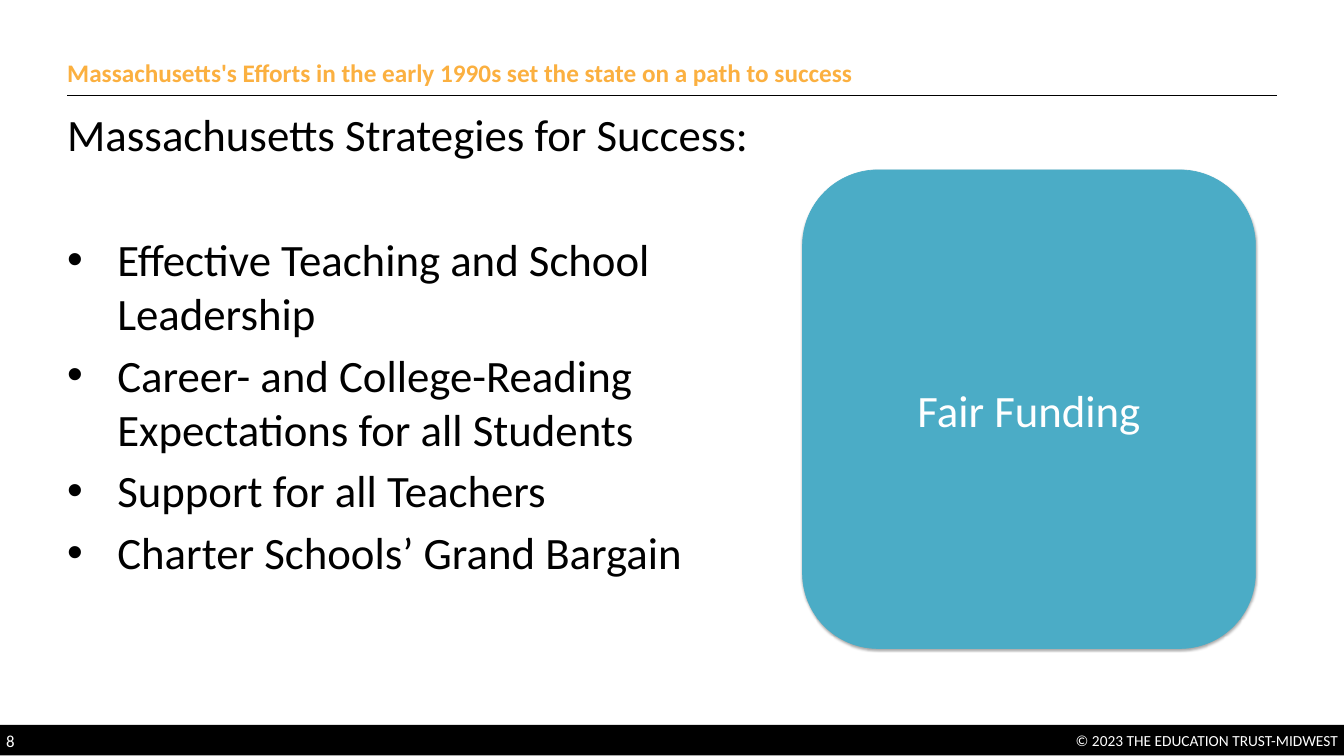
from lxml import etree
from pptx import Presentation
from pptx.dml.color import RGBColor
from pptx.enum.shapes import MSO_CONNECTOR, MSO_SHAPE
from pptx.enum.text import MSO_ANCHOR, MSO_AUTO_SIZE, PP_ALIGN
from pptx.oxml.ns import qn
from pptx.util import Pt

LEFT, CENTER, RIGHT = PP_ALIGN.LEFT, PP_ALIGN.CENTER, PP_ALIGN.RIGHT
TOP, MIDDLE = MSO_ANCHOR.TOP, MSO_ANCHOR.MIDDLE

# Content
TITLE = "Massachusetts's Efforts in the early 1990s set the state on a path to success"
HEADING = "Massachusetts Strategies for Success:"
STRATEGIES = [
    "Effective Teaching and School Leadership",
    "Career- and College-Reading Expectations for all Students",
    "Support for all Teachers",
    "Charter Schools’ Grand Bargain",
]
HIGHLIGHT = "Fair Funding"
COPYRIGHT = "© 2023 THE EDUCATION TRUST-MIDWEST"
PAGE_NUMBER = "8"

# Style and measures in points
FONT = "Calibri"
COLORS = {"title": "FBB040", "text": "000000", "white": "FFFFFF", "teal": "4BACC6"}
WIDTH, HEIGHT = 1583.28, 890.64
MARGIN = 79.2
RULE_TOP = 112.3
BODY_SIZE = 52.8
HANGING = 59
BULLET_GAP, HEADING_GAP = 9.3, 84
BAR_TOP, BAR_HEIGHT = 854, 36


def color(name):
    return RGBColor.from_string(COLORS[name])


def prepare(shape, anchor, side=0, edge=0):
    frame = shape.text_frame
    frame.word_wrap = True
    frame.auto_size = MSO_AUTO_SIZE.NONE
    frame.vertical_anchor = anchor
    frame.margin_left = frame.margin_right = Pt(side)
    frame.margin_top = frame.margin_bottom = Pt(edge)
    return frame


def write(para, text, size, shade, align=LEFT, bold=False):
    para.alignment = align
    span = para.add_run()
    span.text = text
    span.font.name = FONT
    span.font.size = Pt(size)
    span.font.bold = bold
    span.font.color.rgb = color(shade)


def add_bullet(para):
    properties = para._p.get_or_add_pPr()
    properties.set("marL", str(Pt(HANGING)))
    properties.set("indent", str(-Pt(HANGING)))
    etree.SubElement(properties, qn("a:buFont"), typeface="Arial")
    etree.SubElement(properties, qn("a:buChar"), char="•")


def add_block(page, preset, left, top, width, height, fill):
    block = page.shapes.add_shape(preset, Pt(left), Pt(top), Pt(width), Pt(height))
    block.shadow.inherit = False
    block.fill.solid()
    block.fill.fore_color.rgb = color(fill)
    block.line.fill.background()
    return block


def add_soft_shadow(shape):
    effects = shape._element.spPr.find(qn("a:effectLst"))
    shadow = etree.SubElement(
        effects, qn("a:outerShdw"), blurRad=str(Pt(3.1)), dist=str(Pt(1.8)),
        dir="5400000", rotWithShape="0")
    tint = etree.SubElement(shadow, qn("a:srgbClr"), val=COLORS["text"])
    etree.SubElement(tint, qn("a:alpha"), val="35000")


deck = Presentation()
deck.slide_width, deck.slide_height = Pt(WIDTH), Pt(HEIGHT)
page = deck.slides.add_slide(deck.slide_layouts[5])

# Title and the rule below it
title = page.shapes.title
title.left, title.top = Pt(MARGIN), Pt(67.7)
title.width, title.height = Pt(WIDTH - 2 * MARGIN), Pt(42.5)
write(prepare(title, TOP).paragraphs[0], TITLE, 29.7, "title", bold=True)

rule = page.shapes.add_connector(
    MSO_CONNECTOR.STRAIGHT, Pt(MARGIN), Pt(RULE_TOP), Pt(WIDTH - MARGIN), Pt(RULE_TOP))
rule.line.color.rgb = color("text")
rule.line.width = Pt(1)
etree.SubElement(rule._element.spPr, qn("a:effectLst"))

# Heading and strategies
body = page.shapes.add_textbox(Pt(MARGIN), Pt(126), Pt(832.3), Pt(466.6))
frame = prepare(body, TOP)
write(frame.paragraphs[0], HEADING, BODY_SIZE, "text")
for index, strategy in enumerate(STRATEGIES):
    para = frame.add_paragraph()
    para.space_before = Pt(BULLET_GAP if index else HEADING_GAP)
    add_bullet(para)
    write(para, strategy, BODY_SIZE, "text")

# Footer bar with copyright and page number
bar = add_block(page, MSO_SHAPE.RECTANGLE, 0, BAR_TOP, WIDTH, BAR_HEIGHT, "text")
write(prepare(bar, MIDDLE, 7.2).paragraphs[0], COPYRIGHT, 18.1, "white", RIGHT)
number = page.shapes.add_textbox(Pt(0), Pt(849), Pt(356.4), Pt(47.5))
write(prepare(number, MIDDLE, 7.2).paragraphs[0], PAGE_NUMBER, 19.8, "white")

# Highlighted strategy
card = add_block(page, MSO_SHAPE.ROUNDED_RECTANGLE, 945.4, 200.2, 533.5, 563.8, "teal")
card.line.color.rgb = color("teal")
card.line.width = Pt(0.75)
add_soft_shadow(card)
write(prepare(card, MIDDLE, 11.5, 5.8).paragraphs[0], HIGHLIGHT, BODY_SIZE, "white", CENTER)

deck.save("out.pptx")
